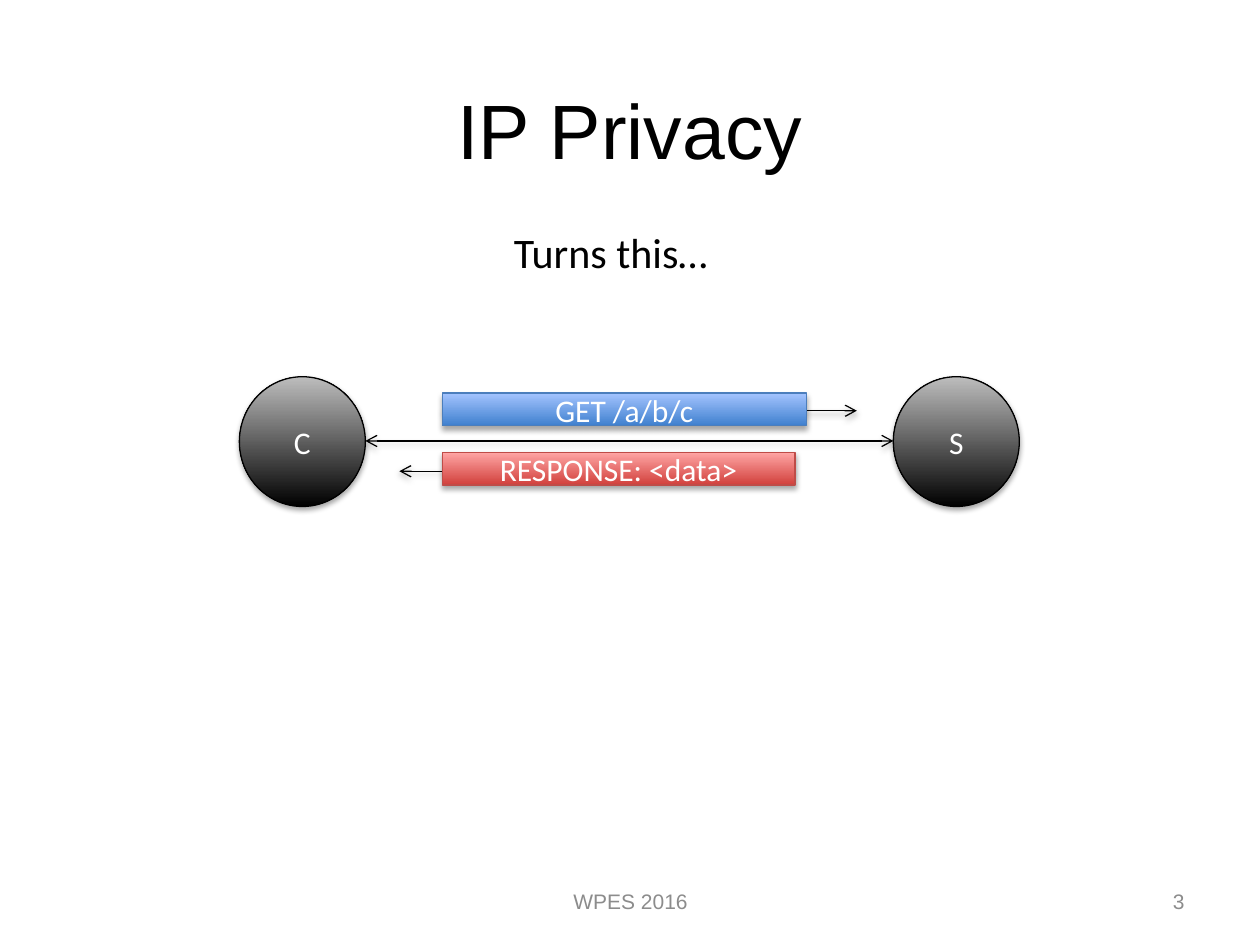
from lxml import etree
from pptx import Presentation
from pptx.dml.color import RGBColor
from pptx.enum.shapes import MSO_CONNECTOR, MSO_SHAPE
from pptx.enum.text import MSO_ANCHOR, MSO_AUTO_SIZE, PP_ALIGN
from pptx.oxml.ns import qn
from pptx.util import Pt

EMU_PER_PX = 9144
TITLE_ONLY = 5
STRAIGHT, ELBOW = MSO_CONNECTOR.STRAIGHT, MSO_CONNECTOR.ELBOW
OVAL, RECTANGLE = MSO_SHAPE.OVAL, MSO_SHAPE.RECTANGLE
LEFT, CENTER, RIGHT = PP_ALIGN.LEFT, PP_ALIGN.CENTER, PP_ALIGN.RIGHT
TOP, MIDDLE = MSO_ANCHOR.TOP, MSO_ANCHOR.MIDDLE
FIT_SHAPE = MSO_AUTO_SIZE.SHAPE_TO_FIT_TEXT

BLACK = RGBColor(0x00, 0x00, 0x00)
WHITE = RGBColor(0xFF, 0xFF, 0xFF)
GREY = RGBColor(0x8C, 0x8C, 0x8C)
SILVER = RGBColor(0xBD, 0xBD, 0xBD)
BLUE = RGBColor(0x3F, 0x80, 0xCE)
LIGHT_BLUE = RGBColor(0xA4, 0xC4, 0xFF)
BLUE_EDGE = RGBColor(0x4B, 0x7E, 0xBC)
RED = RGBColor(0xD1, 0x40, 0x3C)
LIGHT_RED = RGBColor(0xFF, 0xA6, 0xA5)
RED_EDGE = RGBColor(0xBF, 0x4C, 0x48)


def px(*lengths):
    return [length * EMU_PER_PX for length in lengths]


class SlideBuilder:
    heading_font = "Arial"
    body_font = "Calibri"
    line_width = Pt(0.75)

    def __init__(self, slide):
        self.slide = slide

    def set_text(self, frame, text, size, font, color, align, anchor):
        frame.vertical_anchor = anchor
        para = frame.paragraphs[0]
        para.text = text
        para.alignment = align
        para.font.size = Pt(size)
        para.font.name = font
        para.font.color.rgb = color

    def title(self, text, *bounds):
        box = self.slide.shapes.title
        box.left, box.top, box.width, box.height = px(*bounds)
        self.set_text(box.text_frame, text, 44, self.heading_font, BLACK, CENTER, MIDDLE)

    def footer(self, text, align, *bounds):
        frame = self.slide.shapes.add_textbox(*px(*bounds)).text_frame
        frame.word_wrap = True
        self.set_text(frame, text, 12, self.heading_font, GREY, align, MIDDLE)

    def caption(self, text, *bounds):
        frame = self.slide.shapes.add_textbox(*px(*bounds)).text_frame
        frame.word_wrap = False
        frame.auto_size = FIT_SHAPE
        self.set_text(frame, text, 24, self.body_font, BLACK, LEFT, TOP)

    def cast_shadow(self, effects):
        shadow = etree.SubElement(effects, qn("a:outerShdw"), blurRad="40000",
                                  dist="23000", dir="5400000", rotWithShape="0")
        color = etree.SubElement(shadow, qn("a:srgbClr"), val=str(BLACK))
        etree.SubElement(color, qn("a:alpha"), val="35000")

    def shape(self, kind, text, bounds, bottom, top, edge):
        shape = self.slide.shapes.add_shape(kind, *px(*bounds))
        shape.fill.gradient()
        shape.fill.gradient_angle = 90
        for stop, color, position in zip(shape.fill.gradient_stops, (bottom, top), (0, 1)):
            stop.color.rgb = color
            stop.position = position
        shape.line.color.rgb = edge
        shape.line.width = self.line_width
        shape.shadow.inherit = False
        self.cast_shadow(shape.element.spPr.find(qn("a:effectLst")))
        shape.text_frame.word_wrap = True
        self.set_text(shape.text_frame, text, 18, self.body_font, WHITE, CENTER, MIDDLE)

    def arrow(self, kind, start, end, y, *ends):
        line = self.slide.shapes.add_connector(kind, *px(start, y, end, y))
        line.line.color.rgb = BLACK
        line.line.width = self.line_width
        properties = line.element.spPr
        outline = properties.find(qn("a:ln"))
        for name in ends:
            etree.SubElement(outline, qn(f"a:{name}"), type="arrow")
        self.cast_shadow(etree.SubElement(properties, qn("a:effectLst")))


def main():
    deck = Presentation()
    deck.slide_width, deck.slide_height = px(1000, 750)
    page = SlideBuilder(deck.slides.add_slide(deck.slide_layouts[TITLE_ONLY]))

    page.arrow(STRAIGHT, 351, 680, 326, "tailEnd")
    page.arrow(STRAIGHT, 317, 631, 374, "headEnd")
    page.title("IP Privacy", 50, 40, 900, 125)
    page.footer("WPES 2016", CENTER, 342, 695, 317, 40)
    page.footer("3", RIGHT, 717, 695, 233, 40)
    for label, left in (("C", 190), ("S", 709)):
        page.shape(OVAL, label, (left, 299, 100, 103), BLACK, SILVER, BLACK)
    page.arrow(ELBOW, 290, 709, 350, "headEnd", "tailEnd")
    page.shape(RECTANGLE, "GET /a/b/c", (351, 312, 289, 26), BLUE, LIGHT_BLUE, BLUE_EDGE)
    page.shape(RECTANGLE, "RESPONSE: <data>", (351, 359, 280, 26), RED, LIGHT_RED, RED_EDGE)
    page.caption("Turns this…", 398, 175, 178, 50)

    deck.save("out.pptx")


if __name__ == "__main__":
    main()
